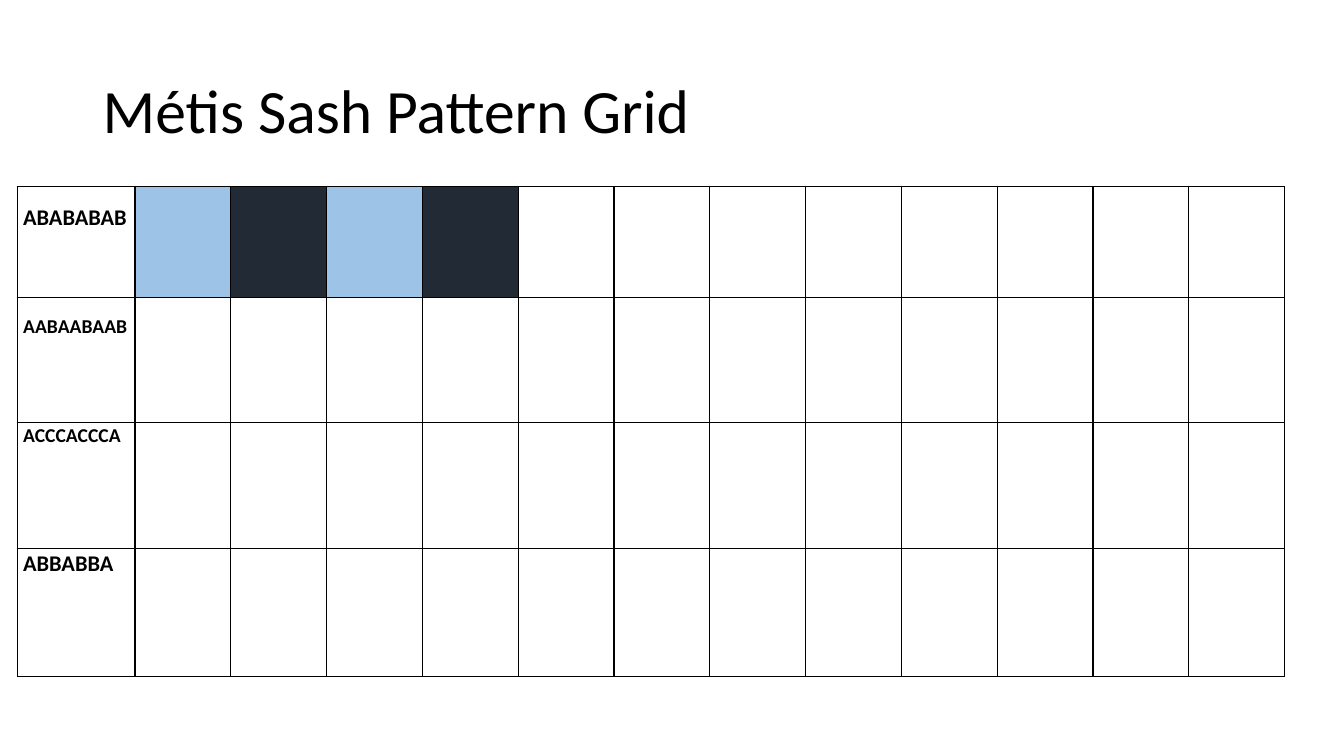
from dataclasses import dataclass

from lxml import etree
from pptx import Presentation
from pptx import util as u
from pptx.dml import color
from pptx.enum import text
from pptx.oxml import ns


@dataclass(frozen=True)
class Theme:
    """Colours, font and type sizes of the slide."""

    font: str = "Calibri"
    ink: str = "000000"
    light_blue: str = "9DC3E6"
    navy: str = "222A35"
    title_size: int = 44
    large_label: int = 16
    small_label: int = 14
    border_width: int = 1


THEME = Theme()
LABEL_WIDTH = 1.17
SQUARE_WIDTH = 0.95
SQUARE_COUNT = 12
SASH_ROWS = [
    ("ABABABAB", THEME.large_label, 0.16, 1.1),
    ("AABAABAAB", THEME.small_label, 0.16, 1.24),
    ("ACCCACCCA", THEME.small_label, 0, 1.25),
    ("ABBABBA", THEME.large_label, 0, 1.27),
]
FIRST_ROW_COLOURS = [THEME.light_blue, THEME.navy] * 2


def write_text(frame, content, *, size, bold=False, line_spacing=1.0):
    """Write one formatted paragraph into a text frame."""
    paragraph = frame.paragraphs[0]
    paragraph.line_spacing = line_spacing
    run = paragraph.add_run()
    run.text = content
    run.font.name = THEME.font
    run.font.size = u.Pt(size)
    run.font.bold = bold
    run.font.color.rgb = color.RGBColor.from_string(THEME.ink)


def add_title(slide, content):
    """Add the slide title, centred vertically in its box."""
    shape = slide.shapes.add_textbox(
        u.Inches(0.92), u.Inches(0.4), u.Inches(11.5), u.Inches(1.45)
    )
    frame = shape.text_frame
    frame.word_wrap = True
    frame.vertical_anchor = text.MSO_ANCHOR.MIDDLE
    write_text(frame, content, size=THEME.title_size, line_spacing=0.9)


def set_borders(cell):
    """Draw a thin solid line on every side of a cell."""
    properties = cell._tc.get_or_add_tcPr()
    for position, side in enumerate(("lnL", "lnR", "lnT", "lnB")):
        line = etree.Element(ns.qn(f"a:{side}"), w=str(u.Pt(THEME.border_width)))
        fill = etree.SubElement(line, ns.qn("a:solidFill"))
        etree.SubElement(fill, ns.qn("a:srgbClr"), val=THEME.ink)
        properties.insert(position, line)


def format_cell(cell, fill=None):
    """Give a cell its margins, fill and borders."""
    cell.margin_left = cell.margin_right = u.Inches(0.06)
    cell.margin_top = cell.margin_bottom = 0
    if fill:
        cell.fill.solid()
        cell.fill.fore_color.rgb = color.RGBColor.from_string(fill)
    else:
        cell.fill.background()
    set_borders(cell)


def add_pattern_grid(slide):
    """Add the grid with one labelled row for each sash pattern."""
    widths = [LABEL_WIDTH] + [SQUARE_WIDTH] * SQUARE_COUNT
    total_height = sum(height for *_, height in SASH_ROWS)
    shape = slide.shapes.add_table(
        len(SASH_ROWS), len(widths), u.Inches(0.17), u.Inches(1.85),
        u.Inches(sum(widths)), u.Inches(total_height),
    )
    table = shape.table
    table.first_row = table.horz_banding = False
    for column, width in zip(table.columns, widths):
        column.width = u.Inches(width)
    for cell in table.iter_cells():
        format_cell(cell)
    for index, (pattern, size, top_margin, height) in enumerate(SASH_ROWS):
        table.rows[index].height = u.Inches(height)
        label = table.cell(index, 0)
        label.margin_top = u.Inches(top_margin)
        write_text(label.text_frame, pattern, size=size, bold=True, line_spacing=1.07)
    for column, fill in enumerate(FIRST_ROW_COLOURS, start=1):
        square = table.cell(0, column)
        square.fill.solid()
        square.fill.fore_color.rgb = color.RGBColor.from_string(fill)


def main():
    """Build and save the sash pattern slide."""
    presentation = Presentation()
    presentation.slide_width = u.Inches(13.33)
    presentation.slide_height = u.Inches(7.5)
    slide = presentation.slides.add_slide(presentation.slide_layouts[6])
    add_title(slide, "Métis Sash Pattern Grid")
    add_pattern_grid(slide)
    presentation.save("out.pptx")


if __name__ == "__main__":
    main()
